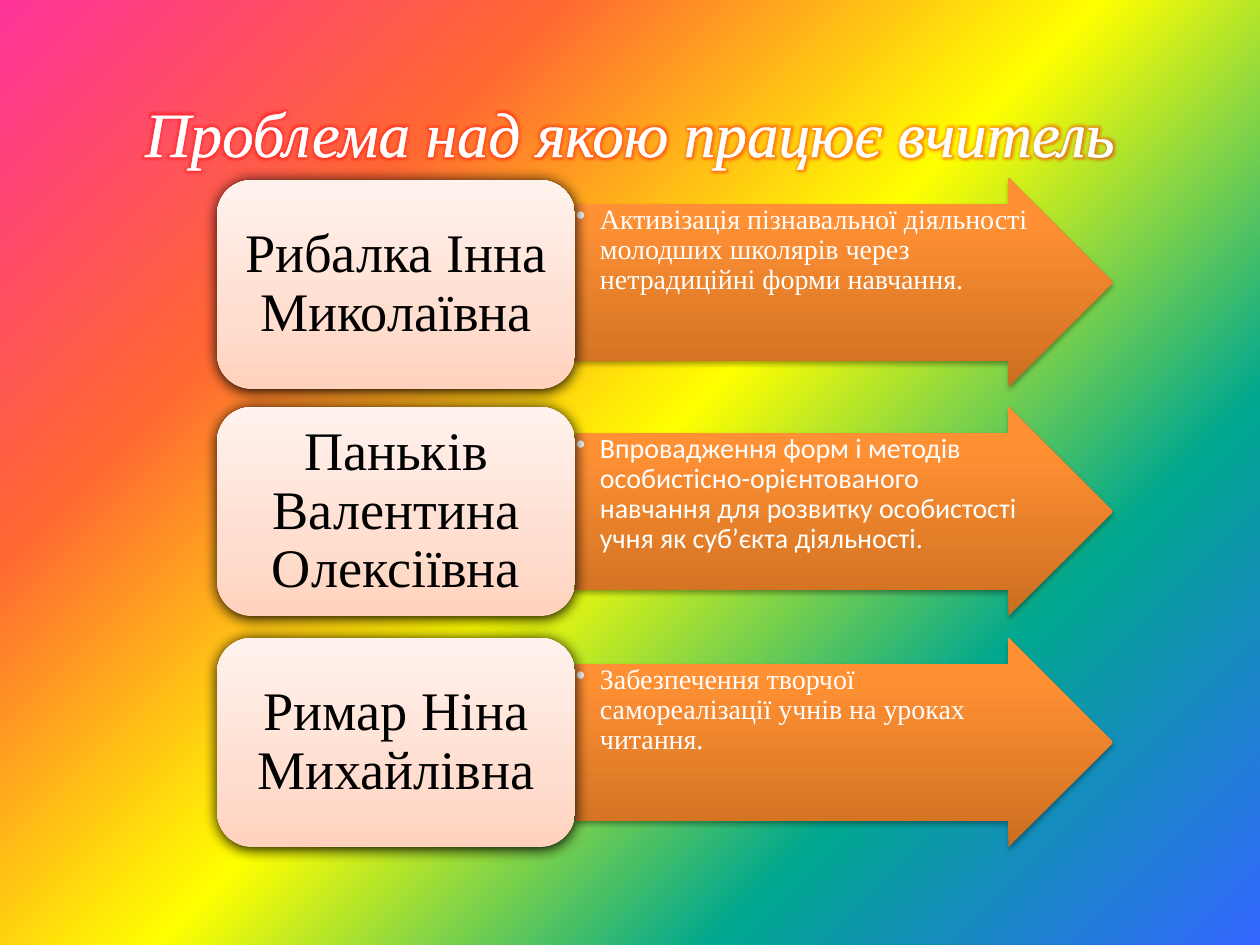
from lxml import etree
from pptx import Presentation
from pptx.dml.color import RGBColor
from pptx.enum.shapes import MSO_SHAPE
from pptx.enum.text import MSO_ANCHOR, PP_ALIGN
from pptx.oxml import parse_xml
from pptx.oxml.ns import nsdecls, qn
from pptx.util import Pt

PX = 914400 / 126
ARROW, BOX = MSO_SHAPE.RIGHT_ARROW, MSO_SHAPE.ROUNDED_RECTANGLE
TOP, MIDDLE = MSO_ANCHOR.TOP, MSO_ANCHOR.MIDDLE
LEFT, CENTER = PP_ALIGN.LEFT, PP_ALIGN.CENTER
SERIF, SANS = "Times New Roman", "Calibri"


def set_gradient(obj, fill, stops, angle):
    fill.gradient()
    grad = next(obj.element.iter(qn("a:gradFill")))
    gs = "".join(f'<a:gs pos="{pos * 1000}"><a:srgbClr val="{color}"/></a:gs>'
                 for pos, color in stops)
    for child in list(grad):
        grad.remove(child)
    grad.append(parse_xml(f'<a:gsLst {nsdecls("a")}>{gs}</a:gsLst>'))
    grad.append(parse_xml(f'<a:lin {nsdecls("a")} ang="{angle * 60000}" scaled="0"/>'))


def write_text(sp, text, anchor, align, margins, size, font, color, italic=False):
    tf = sp.text_frame
    tf.word_wrap, tf.vertical_anchor = True, anchor
    for side, px in zip(("left", "top", "right", "bottom"), margins):
        setattr(tf, f"margin_{side}", round(px * PX))
    p = tf.paragraphs[0]
    p.alignment = align
    r = p.add_run()
    r.text = text
    for name, value in {"size": Pt(size), "name": font, "italic": italic}.items():
        setattr(r.font, name, value)
    r.font.color.rgb = RGBColor.from_string(color)
    return p


prs = Presentation()
prs.slide_width, prs.slide_height = round(1260 * PX), round(945 * PX)
slide = prs.slides.add_slide(prs.slide_layouts[5])
set_gradient(slide, slide.background.fill,
             [(0, "FF3399"), (25, "FF6633"), (50, "FFFF00"), (75, "01A78F"), (100, "3366FF")], 45)

title = slide.shapes.title
for name, px in {"left": 0, "top": 78, "width": 1260, "height": 149}.items():
    setattr(title, name, round(px * PX))
p = write_text(title, "Проблема над якою працює вчитель", TOP, CENTER,
               (13, 16, 13, 6), 36, SERIF, "FFFFFF", True)
rPr = p.runs[0].font._element if hasattr(p.runs[0].font, "_element") else p.runs[0]._r.rPr
rPr.insert(0, parse_xml(
    f'<a:ln {nsdecls("a")} w="18415"><a:solidFill><a:srgbClr val="FFFFFF"/></a:solidFill></a:ln>'))
rPr.insert(2, parse_xml(
    f'<a:effectLst {nsdecls("a")}><a:glow rad="63500"><a:srgbClr val="FF0000">'
    '<a:alpha val="40000"/></a:srgbClr></a:glow></a:effectLst>'))

styles = {
    "arrow": {"kind": ARROW, "left": 575, "width": 538,
              "stops": [(0, "CC6E20"), (80, "FF9034"), (100, "FF9136")],
              "shadow": (35, 3.1, 1.8),
              "text": (TOP, LEFT, (1, 1, 1, 1), 16)},
    "box": {"kind": BOX, "left": 217, "width": 358,
            "stops": [(0, "FFD2BD"), (35, "FFDED0"), (100, "FFF2ED")],
            "shadow": (100, 8.5, 1),
            "text": (MIDDLE, CENTER, (16, 8, 16, 8), 31)},
}
rows = [
    (178, 180, "Рибалка Інна Миколаївна", SERIF,
     "Активізація пізнавальної діяльності молодших школярів через нетрадиційні форми навчання."),
    (407, 407, "Паньків Валентина Олексіївна", SANS,
     "Впровадження форм і методів особистісно-орієнтованого навчання для розвитку "
     "особистості учня як суб’єкта діяльності."),
    (638, 638, "Римар Ніна Михайлівна", SERIF,
     "Забезпечення творчої самореалізації учнів на уроках читання."),
]

for arrow_top, box_top, teacher, topic_font, topic in rows:
    for key, top, text, font, color in (("arrow", arrow_top, topic, topic_font, "FFFFFF"),
                                        ("box", box_top, teacher, SERIF, "000000")):
        st = styles[key]
        sp = slide.shapes.add_shape(st["kind"], *(round(v * PX) for v in (
            st["left"], top, st["width"], 209)))
        if key == "arrow":
            sp.adjustments[0], sp.adjustments[1] = 0.75, 0.5
        set_gradient(sp, sp.fill, st["stops"], 270)
        sp.line.fill.background()
        sp.shadow.inherit = False
        alpha, blur, dist = st["shadow"]
        effects = sp.element.spPr.find(qn("a:effectLst"))
        effects.append(parse_xml(
            f'<a:outerShdw {nsdecls("a")} blurRad="{Pt(blur)}" dist="{Pt(dist)}" dir="5400000" '
            f'rotWithShape="0"><a:srgbClr val="000000"><a:alpha val="{alpha * 1000}"/>'
            '</a:srgbClr></a:outerShdw>'))
        anchor, align, margins, size = st["text"]
        p = write_text(sp, text, anchor, align, margins, size, font, color)
        p.line_spacing = 0.9
        if key == "arrow":
            p.level = 1
            pPr = p._p.get_or_add_pPr()
            pPr.set("marL", str(round(24 * PX)))
            pPr.set("indent", str(round(-24 * PX)))
            etree.SubElement(pPr, qn("a:buChar")).set("char", "•")

prs.save("out.pptx")
